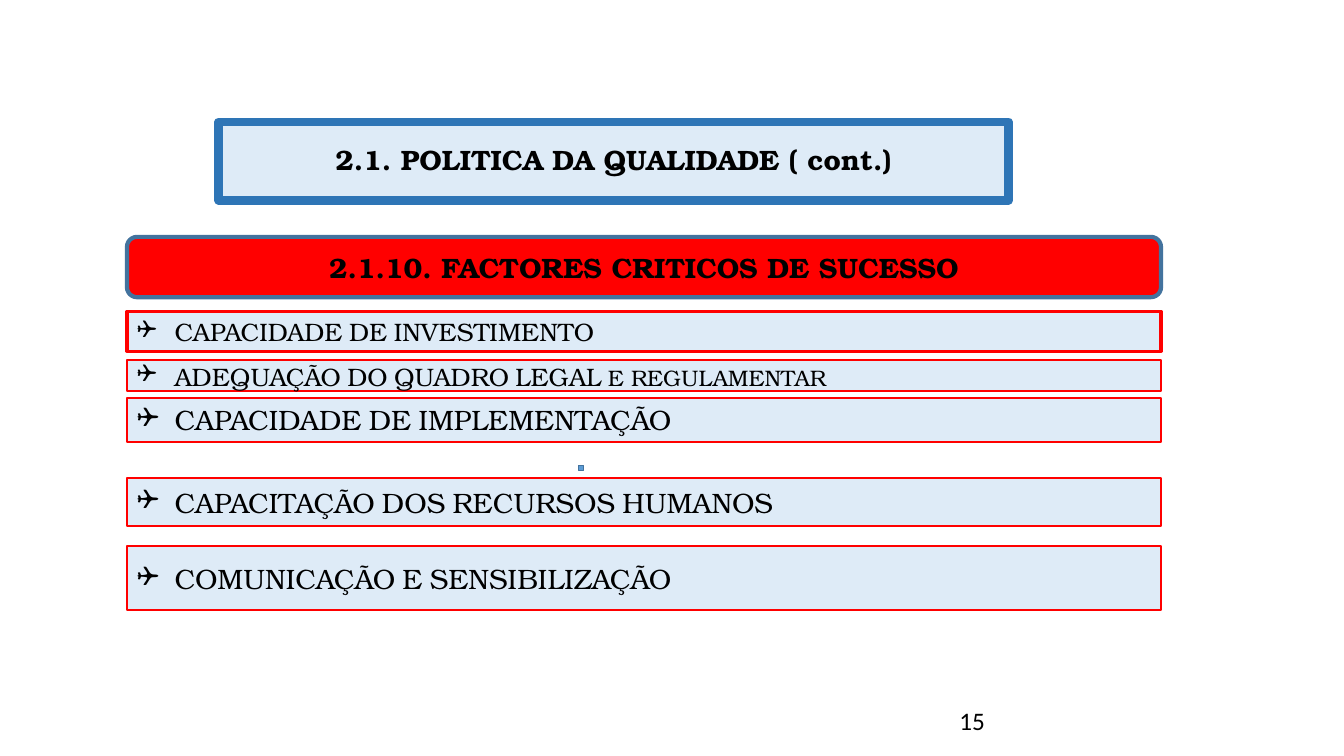
from dataclasses import dataclass

import lxml.etree
import pptx
import pptx.dml.color
import pptx.enum.shapes
import pptx.enum.text
import pptx.oxml.ns
import pptx.shapes.autoshape
import pptx.slide
import pptx.text.text
import pptx.util

Cm = pptx.util.Cm
Shape = pptx.enum.shapes.MSO_SHAPE
Align = pptx.enum.text.PP_ALIGN
Anchor = pptx.enum.text.MSO_ANCHOR


@dataclass(frozen=True)
class Theme:
    serif: str = "TeX Gyre Bonum"
    sans: str = "Calibri"
    ink: str = "000000"
    pale: str = "DEEBF7"
    red: str = "FF0000"
    blue: str = "5B9BD5"
    title_edge: str = "2E75B6"
    edge: str = "43739E"
    large: int = 20
    medium: int = 18


THEME = Theme()


@dataclass(frozen=True)
class Span:
    text: str
    size: int = THEME.large
    font: str = THEME.serif
    bold: bool = False
    small_caps: bool = False


@dataclass(frozen=True)
class Panel:
    left: float
    top: float
    width: float
    height: float
    fill: str
    edge: str
    weight: float
    kind: Shape = Shape.RECTANGLE


@dataclass(frozen=True)
class Factor:
    top: float
    height: float
    spans: tuple[Span, ...]
    weight: float = 1.5
    anchor: Anchor = Anchor.MIDDLE


def factor_span(text: str, size: int = THEME.large) -> Span:
    return Span(text, size, small_caps=True)


LEFT, WIDTH = 3.2, 26.06
BULLET_INDENT = Cm(0.95)
TITLE = Panel(5.51, 3.07, 19.91, 1.98, THEME.pale, THEME.title_edge, 6)
MARK = Panel(14.58, 11.73, 0.13, 0.13, THEME.blue, THEME.edge, 1)
HEADING = Panel(LEFT, 5.97, WIDTH, 1.52, THEME.red, THEME.edge, 3, Shape.ROUNDED_RECTANGLE)
FACTORS = (
    Factor(7.85, 1.0, (factor_span("CAPACIDADE DE INVESTIMENTO", THEME.medium),), weight=2.25),
    Factor(9.07, 0.78, (factor_span("ADEQUAÇÃO DO QUADRO LEGAL ", THEME.medium),
                        factor_span("e regulamentar"))),
    Factor(10.03, 1.11, (factor_span("CAPACIDADE DE IMPLEMENTAÇÃO"),), anchor=Anchor.TOP),
    Factor(12.04, 1.22, (factor_span("CAPACITAÇÃO DOS RECURSOS HUMANOS"),)),
    Factor(13.77, 1.61, (factor_span("COMUNICAÇÃO E SENSIBILIZAÇÃO"),)),
)


def add_panel(page: pptx.slide.Slide, panel: Panel) -> pptx.shapes.autoshape.Shape:
    box = page.shapes.add_shape(panel.kind, Cm(panel.left), Cm(panel.top),
                                Cm(panel.width), Cm(panel.height))
    box.shadow.inherit = False
    box.fill.solid()
    box.fill.fore_color.rgb = pptx.dml.color.RGBColor.from_string(panel.fill)
    box.line.color.rgb = pptx.dml.color.RGBColor.from_string(panel.edge)
    box.line.width = pptx.util.Pt(panel.weight)
    return box


def write(box: pptx.shapes.autoshape.Shape, spans: tuple[Span, ...], align: Align,
          anchor: Anchor) -> pptx.text.text._Paragraph:
    box.text_frame.word_wrap = True
    box.text_frame.vertical_anchor = anchor
    para = box.text_frame.paragraphs[0]
    para.alignment = align
    for span in spans:
        run = para.add_run()
        run.text = span.text
        run.font.name = span.font
        run.font.size = pptx.util.Pt(span.size)
        run.font.bold = span.bold
        run.font.color.rgb = pptx.dml.color.RGBColor.from_string(THEME.ink)
        if span.small_caps:
            run._r.get_or_add_rPr().set("cap", "small")
    return para


def add_bullet(para: pptx.text.text._Paragraph) -> None:
    properties = para._p.get_or_add_pPr()
    properties.set("marL", str(BULLET_INDENT))
    properties.set("indent", str(-BULLET_INDENT))
    qn = pptx.oxml.ns.qn
    lxml.etree.SubElement(properties, qn("a:buFont"), typeface="Wingdings")
    lxml.etree.SubElement(properties, qn("a:buChar"), char="❑")


def add_factor(page: pptx.slide.Slide, factor: Factor) -> None:
    box = add_panel(page, Panel(LEFT, factor.top, WIDTH, factor.height,
                                THEME.pale, THEME.red, factor.weight))
    add_bullet(write(box, factor.spans, Align.LEFT, factor.anchor))


def main() -> None:
    deck = pptx.Presentation()
    deck.slide_width, deck.slide_height = Cm(33.87), Cm(19.05)
    page = deck.slides.add_slide(deck.slide_layouts[6])

    title = Span("2.1. POLITICA DA QUALIDADE ( cont.)", bold=True)
    para = write(add_panel(page, TITLE), (title,), Align.CENTER, Anchor.MIDDLE)
    para.line_spacing = 0.9
    add_panel(page, MARK)

    number = page.shapes.add_textbox(Cm(23.93), Cm(17.65), Cm(7.62), Cm(1.02))
    write(number, (Span("15", THEME.medium, THEME.sans),), Align.LEFT, Anchor.TOP)

    heading = Span("2.1.10. FACTORES CRITICOS DE SUCESSO", bold=True)
    write(add_panel(page, HEADING), (heading,), Align.CENTER, Anchor.MIDDLE)
    for factor in FACTORS:
        add_factor(page, factor)

    deck.save("out.pptx")


if __name__ == "__main__":
    main()
